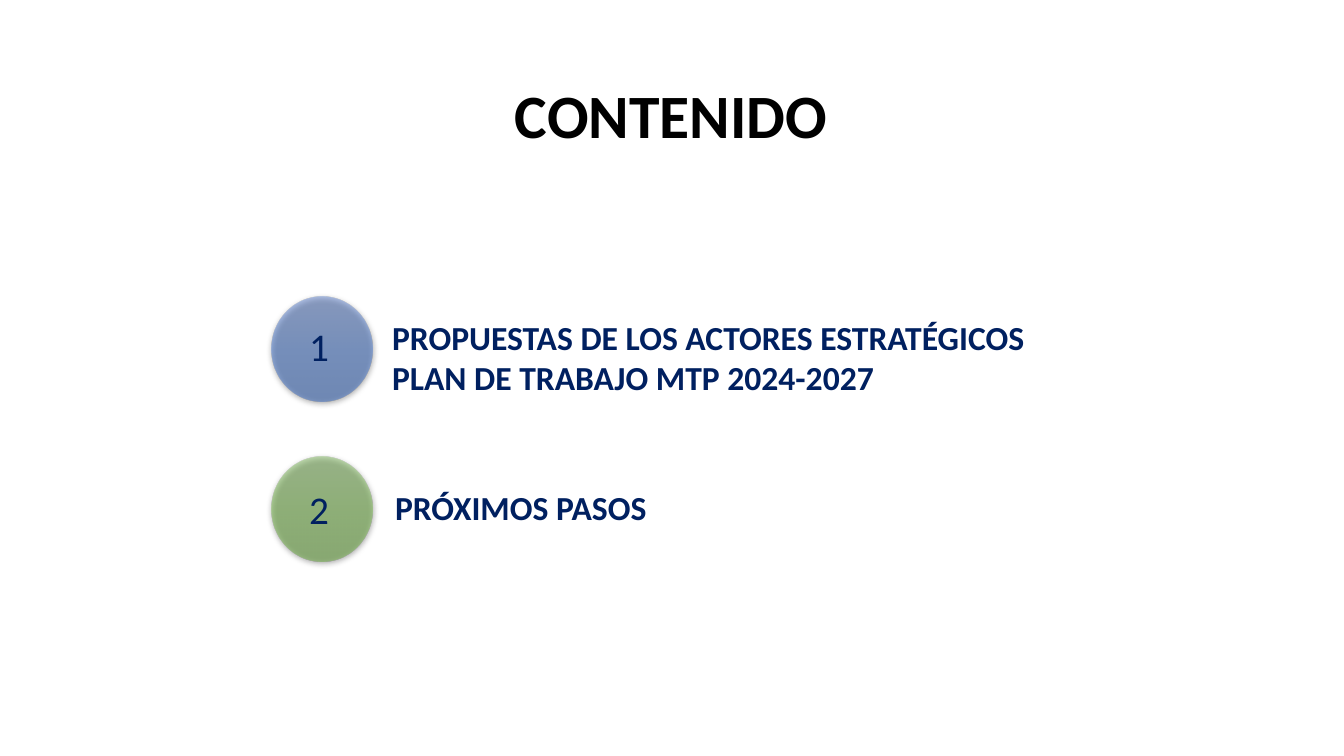
"""Build the contents slide with two numbered agenda items."""
from lxml.etree import fromstring
from pptx import Presentation
from pptx.dml.color import RGBColor
from pptx.enum.shapes import MSO_SHAPE as SHAPE
from pptx.enum.text import MSO_ANCHOR as ANCHOR, MSO_AUTO_SIZE as AUTO, PP_ALIGN as ALIGN
from pptx.oxml.ns import nsdecls
from pptx.util import Pt

BLACK = RGBColor(0x00, 0x00, 0x00)
NAVY = RGBColor(0x00, 0x20, 0x60)
BLUES = [RGBColor(0x61, 0x83, 0xCB), RGBColor(0x3E, 0x70, 0xCA), RGBColor(0x30, 0x62, 0xBB)]
GREENS = [RGBColor(0x81, 0xB8, 0x61), RGBColor(0x6F, 0xB2, 0x42), RGBColor(0x62, 0xA3, 0x36)]


def add_run(p, text, size, color, bold):
    r = p.add_run()
    r.text = text
    r.font.name = "Calibri"
    r.font.size = Pt(size)
    r.font.bold = bold
    r.font.color.rgb = color


def style_circle(sp, colors):
    sp.line.fill.background()
    stops = "".join(
        f'<a:gs pos="{i * 50000}"><a:srgbClr val="{c}"><a:alpha val="50000"/></a:srgbClr></a:gs>'
        for i, c in enumerate(colors))
    sp.line._ln.addprevious(fromstring(
        f'<a:gradFill {nsdecls("a")} rotWithShape="1"><a:gsLst>{stops}</a:gsLst>'
        '<a:lin ang="5400000" scaled="0"/></a:gradFill>'))
    sp.line._ln.addnext(fromstring(
        f'<a:effectLst {nsdecls("a")}><a:outerShdw blurRad="{Pt(4.5)}" dist="{Pt(1.5)}" '
        'dir="5400000" algn="ctr" rotWithShape="0"><a:srgbClr val="000000">'
        '<a:alpha val="63000"/></a:srgbClr></a:outerShdw></a:effectLst>'))


prs = Presentation()
prs.slide_width, prs.slide_height = Pt(960), Pt(540)
s = prs.slides.add_slide(prs.slide_layouts[5])

title = s.shapes.title
title.left, title.top, title.width, title.height = Pt(71.3), Pt(67.7), Pt(816.5), Pt(34.6)
tf = title.text_frame
tf.vertical_anchor = ANCHOR.MIDDLE
tf.auto_size = AUTO.NONE
p = tf.paragraphs[0]
p.alignment = ALIGN.CENTER
p.line_spacing = 0.9
add_run(p, "CONTENIDO", 44, BLACK, True)

items = [
    ("1", BLUES, 211.7, 226.8, (280.1, 199.4, 558.7), 1.0,
     ["PROPUESTAS DE LOS ACTORES ESTRATÉGICOS", "PLAN DE TRABAJO MTP 2024-2027"]),
    ("2", GREENS, 326.2, 343.4, (282.2, 308.9, 468), 0.9, ["PRÓXIMOS PASOS"]),
]
for number, colors, circle_top, number_top, (left, top, width), spacing, lines in items:
    circle = s.shapes.add_shape(SHAPE.OVAL, Pt(194.4), Pt(circle_top), Pt(72), Pt(74.9))
    style_circle(circle, colors)

    tf = s.shapes.add_textbox(Pt(left), Pt(top), Pt(width), Pt(110.9)).text_frame
    tf.word_wrap = True
    tf.vertical_anchor = ANCHOR.MIDDLE
    tf.margin_left = tf.margin_right = 0
    tf.margin_top = tf.margin_bottom = Pt(2)
    for i, line in enumerate(lines):
        p = tf.add_paragraph() if i else tf.paragraphs[0]
        p.line_spacing = spacing
        add_run(p, line, 24, NAVY, True)

    tf = s.shapes.add_textbox(Pt(213.8), Pt(number_top), Pt(26.6), Pt(41)).text_frame
    tf.word_wrap = True
    tf.auto_size = AUTO.SHAPE_TO_FIT_TEXT
    add_run(tf.paragraphs[0], number, 28, NAVY, False)

prs.save("out.pptx")
